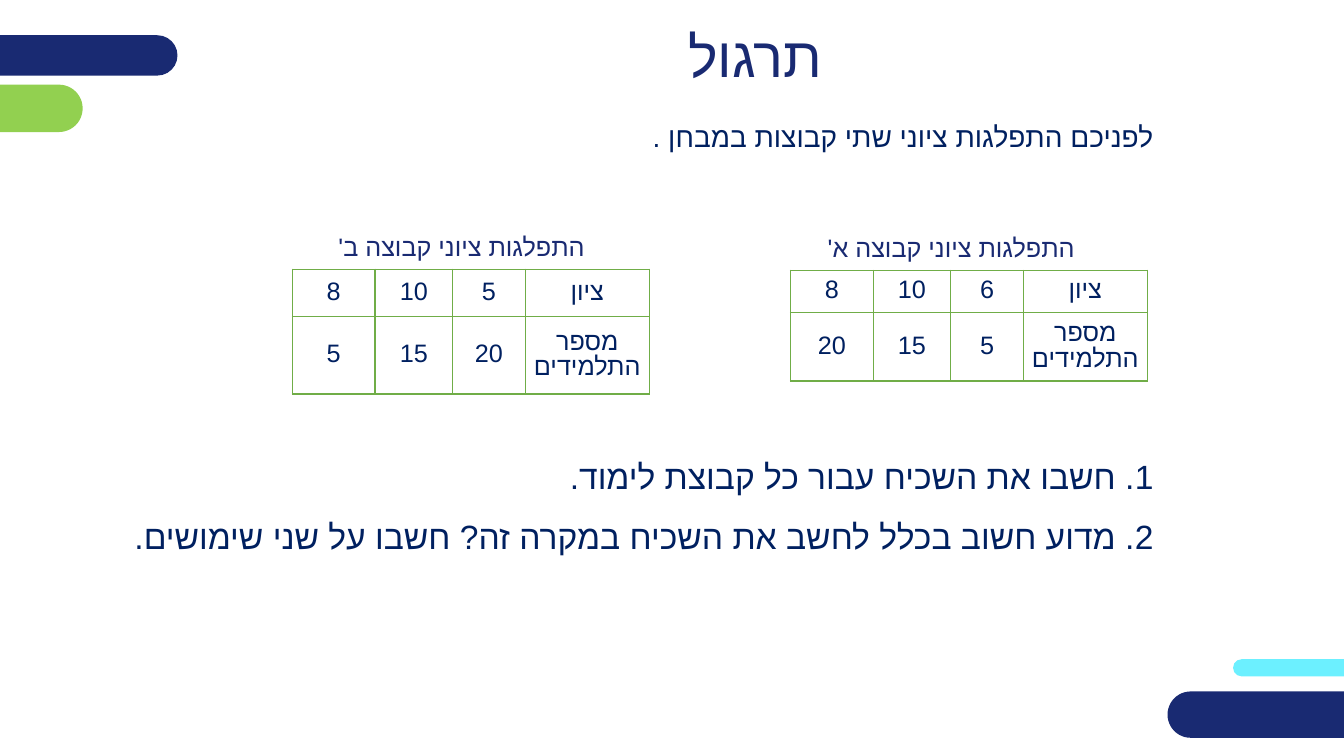
from lxml import etree
from pptx import Presentation
from pptx.dml.color import RGBColor
from pptx.enum.shapes import MSO_SHAPE
from pptx.enum.text import MSO_ANCHOR, MSO_AUTO_SIZE, PP_ALIGN
from pptx.oxml import parse_xml
from pptx.oxml.ns import nsdecls, qn
from pptx.util import Inches, Pt

NAVY = RGBColor(0x19, 0x2A, 0x72)
INK = RGBColor(0x00, 0x20, 0x60)
LIME = RGBColor(0x92, 0xD0, 0x50)
CYAN = RGBColor(0x6C, 0xF0, 0xFF)
GREEN = RGBColor(0x70, 0xAD, 0x47)

ROUND = MSO_SHAPE.ROUNDED_RECTANGLE
MIDDLE, TOP = MSO_ANCHOR.MIDDLE, MSO_ANCHOR.TOP
CENTER, RIGHT = PP_ALIGN.CENTER, PP_ALIGN.RIGHT
NO_FIT = MSO_AUTO_SIZE.NONE
FONT = "Arial"


def write(par, text, size=18, color=INK, align=RIGHT, space=None):
    """Fill one right-to-left paragraph."""
    par.alignment = align
    par._p.get_or_add_pPr().set("rtl", "1")
    if space:
        par.line_spacing = space
    run = par.add_run()
    run.text = text
    font = run.font
    font.name, font.size = FONT, Pt(size)
    font.color.rgb = color
    etree.SubElement(font._element, qn("a:cs")).set("typeface", FONT)


class Board:
    """Holds the slide and draws each kind of element on it."""

    def __init__(self, deck):
        self.slide = deck.slides.add_slide(deck.slide_layouts[5])
        self.shapes = self.slide.shapes

    def pill(self, box, color):
        shape = self.shapes.add_shape(ROUND, *map(Inches, box))
        shape.adjustments[0] = 0.5
        shape.shadow.inherit = False
        shape.fill.solid()
        shape.fill.fore_color.rgb = color
        shape.line.fill.background()

    def title(self, text, box):
        shape = self.shapes.title
        shape.left, shape.top, shape.width, shape.height = map(Inches, box)
        frame = shape.text_frame
        frame.auto_size, frame.vertical_anchor = NO_FIT, MIDDLE
        write(frame.paragraphs[0], text, size=40, color=NAVY, align=CENTER)

    def text(self, lines, box, anchor=TOP, space=None, **style):
        frame = self.shapes.add_textbox(*map(Inches, box)).text_frame
        frame.word_wrap = True
        frame.vertical_anchor = anchor
        for i, line in enumerate(lines):
            par = frame.add_paragraph() if i else frame.paragraphs[0]
            write(par, line, space=space if i else None, **style)

    def table(self, rows, left, top, widths, heights):
        frame = self.shapes.add_table(
            len(rows), len(widths), Inches(left), Inches(top),
            Inches(sum(widths)), Inches(sum(heights)))
        grid = frame.table
        grid.first_row = grid.horz_banding = False
        for col, width in zip(grid.columns, widths):
            col.width = Inches(width)
        for row, height, texts in zip(grid.rows, heights, rows):
            row.height = Inches(height)
            for cell, text in zip(row.cells, texts):
                self.cell(cell, text)

    def cell(self, cell, text):
        cell.margin_left = cell.margin_right = Inches(0.07)
        cell.margin_top = cell.margin_bottom = Inches(0.07)
        cell.vertical_anchor = MIDDLE
        for side in "LRTB":
            cell._tc.get_or_add_tcPr().append(parse_xml(
                f'<a:ln{side} {nsdecls("a")} w="{Pt(1)}"><a:solidFill>'
                f'<a:srgbClr val="{GREEN}"/></a:solidFill></a:ln{side}>'))
        cell.fill.background()
        write(cell.text_frame.paragraphs[0], text, align=CENTER, space=0.9)


def main():
    deck = Presentation()
    deck.slide_width, deck.slide_height = Inches(13.33), Inches(7.5)
    board = Board(deck)

    # Corner pills
    board.pill((12.23, 6.54, 1.74, 0.17), CYAN)
    board.pill((-0.45, 0.84, 1.27, 0.47), LIME)
    board.pill((-0.53, 0.35, 2.29, 0.4), NAVY)
    board.pill((11.58, 6.86, 2.4, 0.46), NAVY)

    # Title and lead
    board.title("תרגול", (1.9, 0.2, 11.18, 0.7))
    board.text(["לפניכם התפלגות ציוני שתי קבוצות במבחן ."],
               (6.22, 1.14, 5.32, 0.44), size=20)

    # Grade tables with captions
    widths = (0.82, 0.77, 0.72, 1.23)
    groups = [
        ("התפלגות ציוני קבוצה א'", (6.45, 2.25), (7.84, 2.68),
         (0.42, 0.66), ("8", "10", "6"), ("20", "15", "5")),
        ("התפלגות ציוני קבוצה ב'", (1.59, 2.24), (2.9, 2.67),
         (0.47, 0.77), ("8", "10", "5"), ("5", "15", "20")),
    ]
    for name, spot, place, heights, marks, counts in groups:
        board.text([name], (*spot, 4.31, 0.4), anchor=MIDDLE, color=NAVY)
        rows = [(*marks, "ציון"), (*counts, "מספר התלמידים")]
        board.table(rows, *place, widths, heights)

    # Questions
    board.text(["1. חשבו את השכיח עבור כל קבוצת לימוד.",
                "2. מדוע חשוב בכלל לחשב את השכיח במקרה זה? חשבו על שני שימושים."],
               (0.79, 4.47, 10.75, 1.11), size=24, space=1.5)

    deck.save("out.pptx")


if __name__ == "__main__":
    main()
